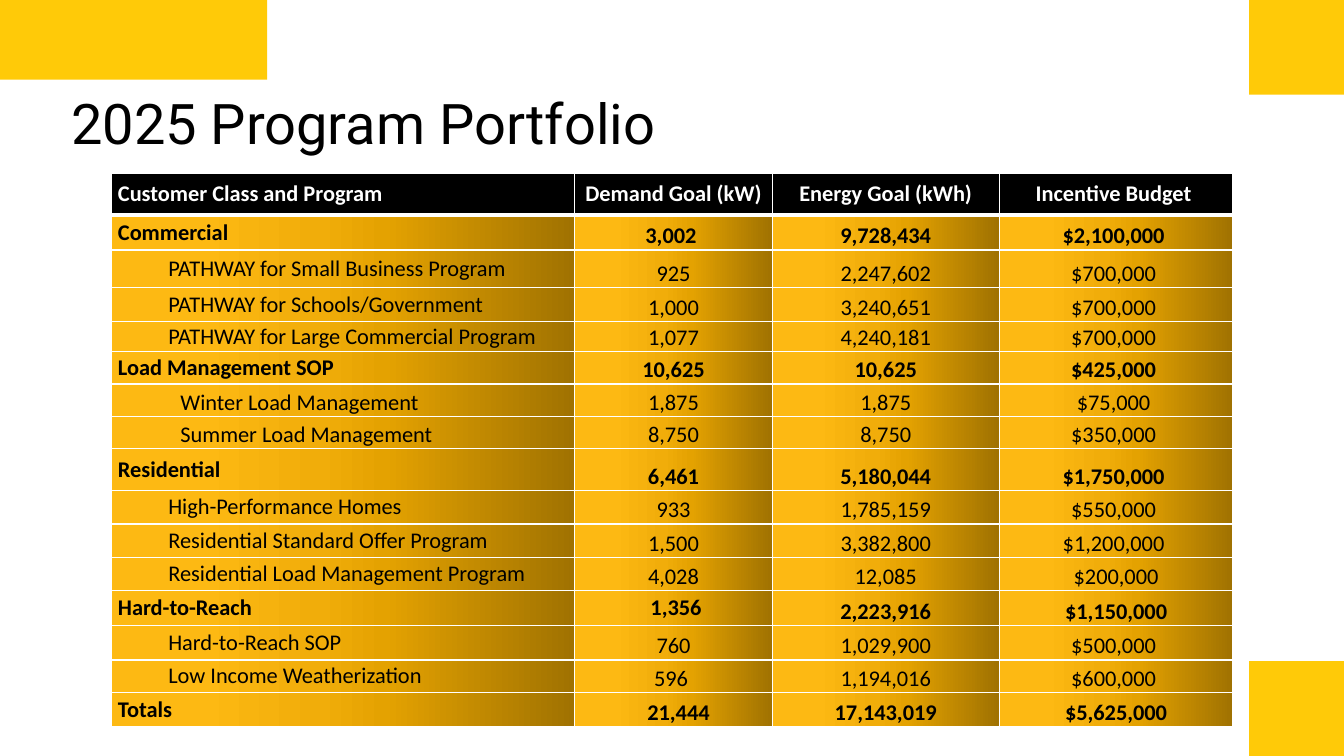
from dataclasses import dataclass

from lxml.etree import SubElement
from pptx import Presentation
from pptx.dml.color import RGBColor
from pptx.enum.shapes import MSO_SHAPE
from pptx.enum.text import MSO_ANCHOR, PP_ALIGN
from pptx.oxml.ns import qn
from pptx.util import Inches, Pt


@dataclass(frozen=True)
class Theme:
    """Colours, fonts and type sizes of the slide."""

    accent: str = "FFCA08"
    ink: str = "000000"
    paper: str = "FFFFFF"
    gold: tuple = ((0, "A07201"), (41, "E4A201"), (55, "F1AD0A"), (81, "FDB913"))
    title_font: str = "Roboto"
    table_font: str = "Calibri"
    title_size: int = 40
    table_size: int = 16


THEME = Theme()
CORNER_BLOCKS = (
    (12.39, 6.56, 0.94, 0.94),
    (0, 0, 2.65, 0.79),
    (12.39, 0, 0.94, 0.94),
)
COLUMN_WIDTHS = (4.6, 1.96, 2.25, 2.32)
HEADINGS = (
    "Customer Class and Program",
    "Demand Goal (kW)",
    "Energy Goal (kWh)",
    "Incentive Budget\u00a0",
)
CLASS, PROGRAM, SEASON = "class", "program", "season"
PORTFOLIO = (
    (CLASS, 0.35, "Commercial", "3,002 ", "9,728,434", "$2,100,000 "),
    (PROGRAM, 0.37, "PATHWAY for Small Business Program", "925", "2,247,602", "$700,000 "),
    (PROGRAM, 0.34, "PATHWAY for Schools/Government", "1,000", "3,240,651", "$700,000 "),
    (PROGRAM, 0.3, "PATHWAY for Large Commercial Program", "1,077", "4,240,181", "$700,000 "),
    (CLASS, 0.32, "Load Management SOP", "10,625", "10,625", "$425,000 "),
    (SEASON, 0.32, "Winter Load Management", "1,875", "1,875", "$75,000 "),
    (SEASON, 0.32, "Summer Load Management", "8,750", "8,750", "$350,000 "),
    (CLASS, 0.42, "Residential", "6,461", "5,180,044", "$1,750,000 "),
    (PROGRAM, 0.33, "High-Performance Homes", "933", "1,785,159", "$550,000 "),
    (PROGRAM, 0.33, "Residential Standard Offer Program", "1,500", "3,382,800", "$1,200,000 "),
    (PROGRAM, 0.33, "Residential Load Management Program", "4,028", "12,085", "$200,000"),
    (CLASS, 0.35, "Hard-to-Reach", " 1,356", "2,223,916", "$1,150,000"),
    (PROGRAM, 0.34, "Hard-to-Reach SOP", "760", "1,029,900", "$500,000 "),
    (PROGRAM, 0.32, "Low Income Weatherization", "596 ", "1,194,016", "$600,000 "),
    (CLASS, 0.34, "Totals", "21,444", "17,143,019", " $5,625,000 "),
)
LABEL_FORMAT = {
    "vertical_anchor": MSO_ANCHOR.MIDDLE,
    "margin_left": Inches(0.07),
    "margin_right": Inches(0.07),
    "margin_top": 0,
    "margin_bottom": 0,
}
VALUE_FORMAT = {
    **LABEL_FORMAT,
    "vertical_anchor": MSO_ANCHOR.BOTTOM,
    "margin_left": 0,
    "margin_right": 0,
}
SEASON_FORMAT = {**VALUE_FORMAT, "margin_left": Inches(0.19)}
SPECIAL_FORMATS = {
    "1,356": LABEL_FORMAT,
    "21,444": {**VALUE_FORMAT, "margin_left": Inches(0.1)},
}


def apply_format(target, values):
    """Set each named attribute on the target."""
    for name, value in values.items():
        setattr(target, name, value)


def write_text(paragraph, text, font, size, color, bold=False):
    """Add one styled run to a paragraph."""
    run = paragraph.add_run()
    run.text = text
    apply_format(run.font, {"name": font, "size": Pt(size), "bold": bold})
    run.font.color.rgb = RGBColor.from_string(color)


def add_corner_block(slide, left, top, width, height):
    """Draw a plain accent rectangle."""
    block = slide.shapes.add_shape(
        MSO_SHAPE.RECTANGLE, Inches(left), Inches(top), Inches(width), Inches(height)
    )
    block.shadow.inherit = False
    block.fill.solid()
    block.fill.fore_color.rgb = RGBColor.from_string(THEME.accent)
    block.line.fill.background()


def add_title(slide, text):
    """Add the slide heading."""
    heading = slide.shapes.add_textbox(Inches(0.61), Inches(0.83), Inches(12.12), Inches(0.77))
    heading.text_frame.word_wrap = True
    write_text(
        heading.text_frame.paragraphs[0], text, THEME.title_font, THEME.title_size, THEME.ink
    )


def add_color(parent, color):
    """Append an RGB colour element."""
    SubElement(parent, qn("a:srgbClr"), val=color)


def add_borders(cell, bottom_width):
    """Give a cell white borders on all four sides."""
    properties = cell._tc.get_or_add_tcPr()
    for side, width in (("L", 1), ("R", 1), ("T", 1), ("B", bottom_width)):
        border = SubElement(properties, qn(f"a:ln{side}"), w=str(Pt(width)))
        add_color(SubElement(border, qn("a:solidFill")), THEME.paper)


def fill_gold(cell):
    """Fill a cell with the gold gradient running right to left."""
    gradient = SubElement(cell._tc.get_or_add_tcPr(), qn("a:gradFill"), rotWithShape="1")
    stops = SubElement(gradient, qn("a:gsLst"))
    for position, color in THEME.gold:
        add_color(SubElement(stops, qn("a:gs"), pos=str(position * 1000)), color)
    SubElement(gradient, qn("a:lin"), ang=str(180 * 60000), scaled="0")


def write_cell(cell, text, cell_format, alignment, color, bold):
    """Lay out a cell, write its text and return the paragraph."""
    apply_format(cell, cell_format)
    paragraph = cell.text_frame.paragraphs[0]
    paragraph.alignment = alignment
    write_text(paragraph, text, THEME.table_font, THEME.table_size, color, bold)
    return paragraph


def fill_heading_row(table):
    """Write the black heading row."""
    for column, heading in enumerate(HEADINGS):
        cell = table.cell(0, column)
        alignment = PP_ALIGN.CENTER if column else PP_ALIGN.JUSTIFY
        write_cell(cell, heading, LABEL_FORMAT, alignment, THEME.paper, True)
        add_borders(cell, 3)
        cell.fill.solid()
        cell.fill.fore_color.rgb = RGBColor.from_string(THEME.ink)


def fill_portfolio_row(table, row, kind, label, *goals):
    """Write a label and its goals on gold."""
    bold = kind == CLASS
    label_cell = table.cell(row, 0)
    label_format = SEASON_FORMAT if kind == SEASON else LABEL_FORMAT
    alignment = PP_ALIGN.LEFT if kind == SEASON else PP_ALIGN.JUSTIFY
    paragraph = write_cell(label_cell, label, label_format, alignment, THEME.ink, bold)
    if not bold:
        paragraph.level = 1
        apply_indent = paragraph._p.get_or_add_pPr().set
        apply_indent("marL", str(Inches(0.5)))
        apply_indent("indent", "0")
    for column, goal in enumerate(goals, start=1):
        goal_format = SPECIAL_FORMATS.get(goal.strip(), VALUE_FORMAT)
        write_cell(table.cell(row, column), goal, goal_format, PP_ALIGN.CENTER, THEME.ink, bold)
    for column in range(len(HEADINGS)):
        add_borders(table.cell(row, column), 1)
        fill_gold(table.cell(row, column))


def add_portfolio_table(slide):
    """Add the table of goals and budgets by customer class."""
    heights = [0.41] + [height for _, height, *_ in PORTFOLIO]
    table = slide.shapes.add_table(
        len(heights), len(HEADINGS), Inches(1.1), Inches(1.72),
        Inches(sum(COLUMN_WIDTHS)), Inches(sum(heights)),
    ).table
    table.horz_banding = False
    for column, width in zip(table.columns, COLUMN_WIDTHS):
        column.width = Inches(width)
    for row, height in zip(table.rows, heights):
        row.height = Inches(height)
    fill_heading_row(table)
    for row, (kind, _, *texts) in enumerate(PORTFOLIO, start=1):
        fill_portfolio_row(table, row, kind, *texts)


def main():
    """Build and save the program portfolio slide."""
    presentation = Presentation()
    apply_format(presentation, {"slide_width": Inches(13.33), "slide_height": Inches(7.5)})
    slide = presentation.slides.add_slide(presentation.slide_layouts[6])
    for block in CORNER_BLOCKS:
        add_corner_block(slide, *block)
    add_title(slide, "2025 Program Portfolio")
    add_portfolio_table(slide)
    presentation.save("out.pptx")


if __name__ == "__main__":
    main()
